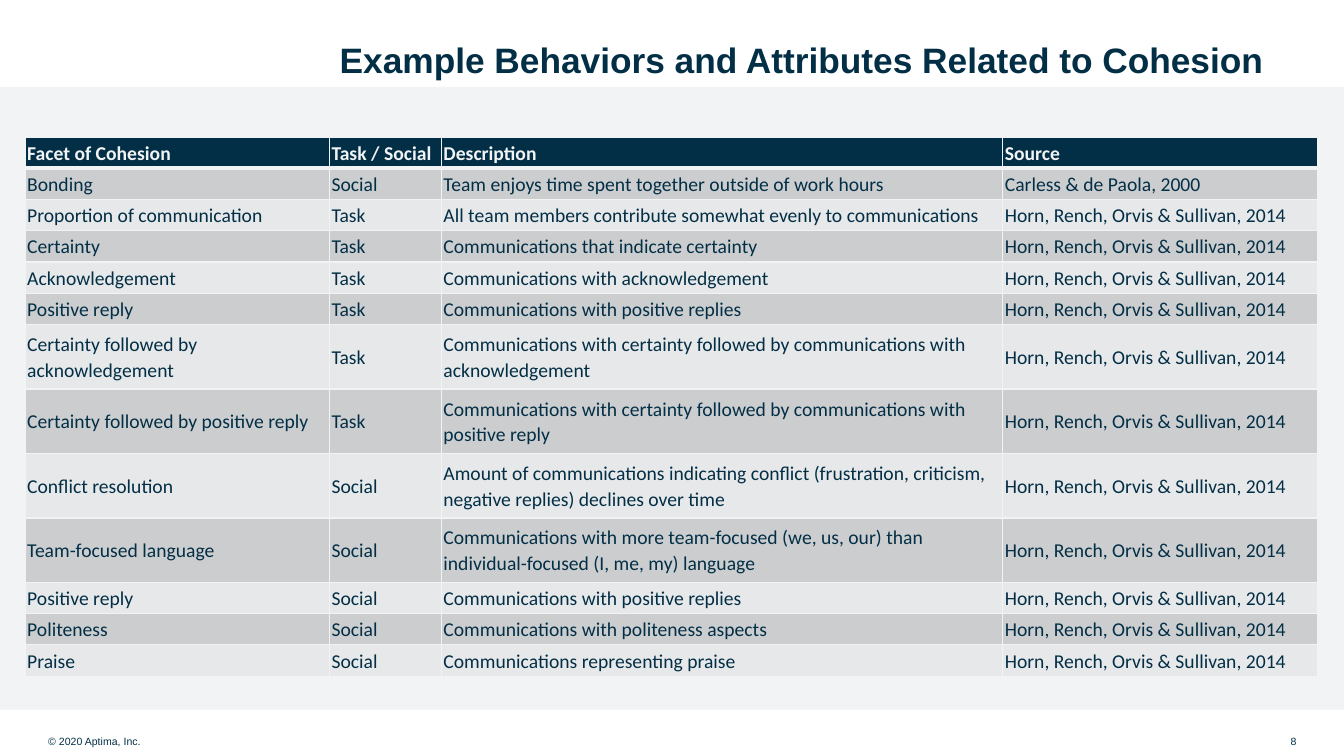
from dataclasses import dataclass
from typing import Any

from lxml.etree import SubElement
from pptx import Presentation
from pptx.dml.color import RGBColor as RGB
from pptx.enum.shapes import MSO_SHAPE as SHAPE
from pptx.enum.text import MSO_ANCHOR as ANCHOR, PP_ALIGN as ALIGN
from pptx.oxml.ns import qn
from pptx.util import Inches, Pt

COLORS = {
    "navy": "032F46",
    "mist": "F1F3F4",
    "white": "FFFFFF",
    "dark_row": "CCCDCF",
    "light_row": "E7E8E9",
}
GRID_COLS, GRID_ROWS = 160, 90
UNIT = Inches(7.5) / GRID_ROWS
SIDES = ("L", "R", "T", "B")


@dataclass(frozen=True)
class Box:
    col: float
    row: float
    cols: float
    rows: float

    def emu(self) -> tuple[int, ...]:
        return tuple(units(n) for n in (self.col, self.row, self.cols, self.rows))


@dataclass(frozen=True)
class Band:
    box: Box
    color: str


@dataclass(frozen=True)
class Label:
    text: str
    box: Box
    align: Any


@dataclass(frozen=True)
class Facet:
    name: str
    kind: str
    description: str
    source: str = "Horn, Rench, Orvis & Sullivan, 2014"
    rows: float = 3.72

    def cells(self) -> tuple[str, ...]:
        return self.name, self.kind, self.description, self.source


TALL = 7.68
HEADER_ROWS = 10.32
BANDS = (
    Band(Box(0, HEADER_ROWS, GRID_COLS, 74.16), "mist"),
    Band(Box(0, 0, GRID_COLS, HEADER_ROWS), "white"),
)
LABELS = (
    Label("© 2020 Aptima, Inc.", Box(4.56, 86.4, 36, 3.6), ALIGN.LEFT),
    Label("8", Box(148.92, 86.4, 6.6, 3.6), ALIGN.RIGHT),
)
TABLE_COLS = (36.24, 13.32, 66.84, 37.44)
FACETS = (
    Facet("Facet of Cohesion", "Task / Social", "Description", "Source"),
    Facet("Bonding", "Social", "Team enjoys time spent together outside of work hours",
          "Carless & de Paola, 2000"),
    Facet("Proportion of communication", "Task",
          "All team members contribute somewhat evenly to communications"),
    Facet("Certainty", "Task", "Communications that indicate certainty"),
    Facet("Acknowledgement", "Task", "Communications with acknowledgement"),
    Facet("Positive reply", "Task", "Communications with positive replies"),
    Facet("Certainty followed by acknowledgement", "Task",
          "Communications with certainty followed by communications with acknowledgement",
          rows=TALL),
    Facet("Certainty followed by positive reply", "Task",
          "Communications with certainty followed by communications with positive reply",
          rows=TALL),
    Facet("Conflict resolution", "Social",
          "Amount of communications indicating conflict (frustration, criticism, "
          "negative replies) declines over time", rows=TALL),
    Facet("Team-focused language", "Social",
          "Communications with more team-focused (we, us, our) than "
          "individual-focused (I, me, my) language", rows=TALL),
    Facet("Positive reply", "Social", "Communications with positive replies"),
    Facet("Politeness", "Social", "Communications with politeness aspects"),
    Facet("Praise", "Social", "Communications representing praise"),
)


def units(n: float) -> int:
    return round(n * UNIT)


def rgb(name: str) -> RGB:
    return RGB.from_string(COLORS[name])


def apply(target: Any, values: dict[str, Any]) -> None:
    for name, value in values.items():
        setattr(target, name, value)


def place(sp: Any, box: Box) -> None:
    apply(sp, dict(zip(("left", "top", "width", "height"), box.emu())))


def write(tf: Any, text: str, size: float, font: str, color: str,
          bold: bool = False, **paragraph: Any) -> None:
    p = tf.paragraphs[0]
    apply(p, paragraph)
    r = p.add_run()
    r.text = text
    apply(r.font, {"size": Pt(size), "name": font, "bold": bold})
    r.font.color.rgb = rgb(color)


def draw_band(s: Any, band: Band) -> None:
    sp = s.shapes.add_shape(SHAPE.RECTANGLE, *band.box.emu())
    sp.shadow.inherit = False
    sp.fill.solid()
    sp.fill.fore_color.rgb = rgb(band.color)
    sp.line.fill.background()


def draw_title(s: Any, text: str, box: Box) -> None:
    sp = s.shapes.title
    place(sp, box)
    sp.element.getparent().append(sp.element)
    tf = sp.text_frame
    apply(tf, {"word_wrap": True, "vertical_anchor": ANCHOR.BOTTOM})
    write(tf, text, 25.2, "Arial", "navy", bold=True,
          alignment=ALIGN.LEFT, line_spacing=0.9)


def draw_label(s: Any, label: Label) -> None:
    tf = s.shapes.add_textbox(*label.box.emu()).text_frame
    apply(tf, {"word_wrap": True, "vertical_anchor": ANCHOR.MIDDLE})
    write(tf, label.text, 7.5, "Arial", "navy", alignment=label.align)


def draw_borders(cell: Any, widths: dict[str, int]) -> None:
    tcPr = cell._tc.get_or_add_tcPr()
    for side in SIDES:
        ln = SubElement(tcPr, qn(f"a:ln{side}"), w=str(Pt(widths.get(side, 1))))
        fill = SubElement(ln, qn("a:solidFill"))
        SubElement(fill, qn("a:srgbClr"), val=COLORS["mist"])


def draw_cell(cell: Any, text: str, row: int) -> None:
    header = row == 0
    inset = Inches(0.02)
    apply(cell, {"margin_left": inset, "margin_right": inset, "margin_top": 0,
                 "margin_bottom": 0, "vertical_anchor": ANCHOR.MIDDLE})
    draw_borders(cell, {0: {"B": 3}, 1: {"T": 3}}.get(row, {}))
    cell.fill.solid()
    cell.fill.fore_color.rgb = rgb(
        "navy" if header else "dark_row" if row % 2 else "light_row")
    write(cell.text_frame, text, 14, "Calibri", "mist" if header else "navy",
          bold=header, line_spacing=1.07)


def draw_table(s: Any, facets: tuple[Facet, ...], col: float, row: float) -> None:
    box = Box(col, row, sum(TABLE_COLS), sum(f.rows for f in facets))
    table = s.shapes.add_table(len(facets), len(TABLE_COLS), *box.emu()).table
    for column, cols in zip(table.columns, TABLE_COLS):
        column.width = units(cols)
    for i, facet in enumerate(facets):
        table.rows[i].height = units(facet.rows)
        for j, text in enumerate(facet.cells()):
            draw_cell(table.cell(i, j), text, i)


def main() -> None:
    prs = Presentation()
    apply(prs, {"slide_width": units(GRID_COLS), "slide_height": units(GRID_ROWS)})
    s = prs.slides.add_slide(prs.slide_layouts.get_by_name("Title Only"))
    for band in BANDS:
        draw_band(s, band)
    draw_title(s, "Example Behaviors and Attributes Related to Cohesion",
               Box(39.24, 0, 116.16, HEADER_ROWS))
    for label in LABELS:
        draw_label(s, label)
    draw_table(s, FACETS, 3, 16.32)
    prs.save("out.pptx")


if __name__ == "__main__":
    main()
